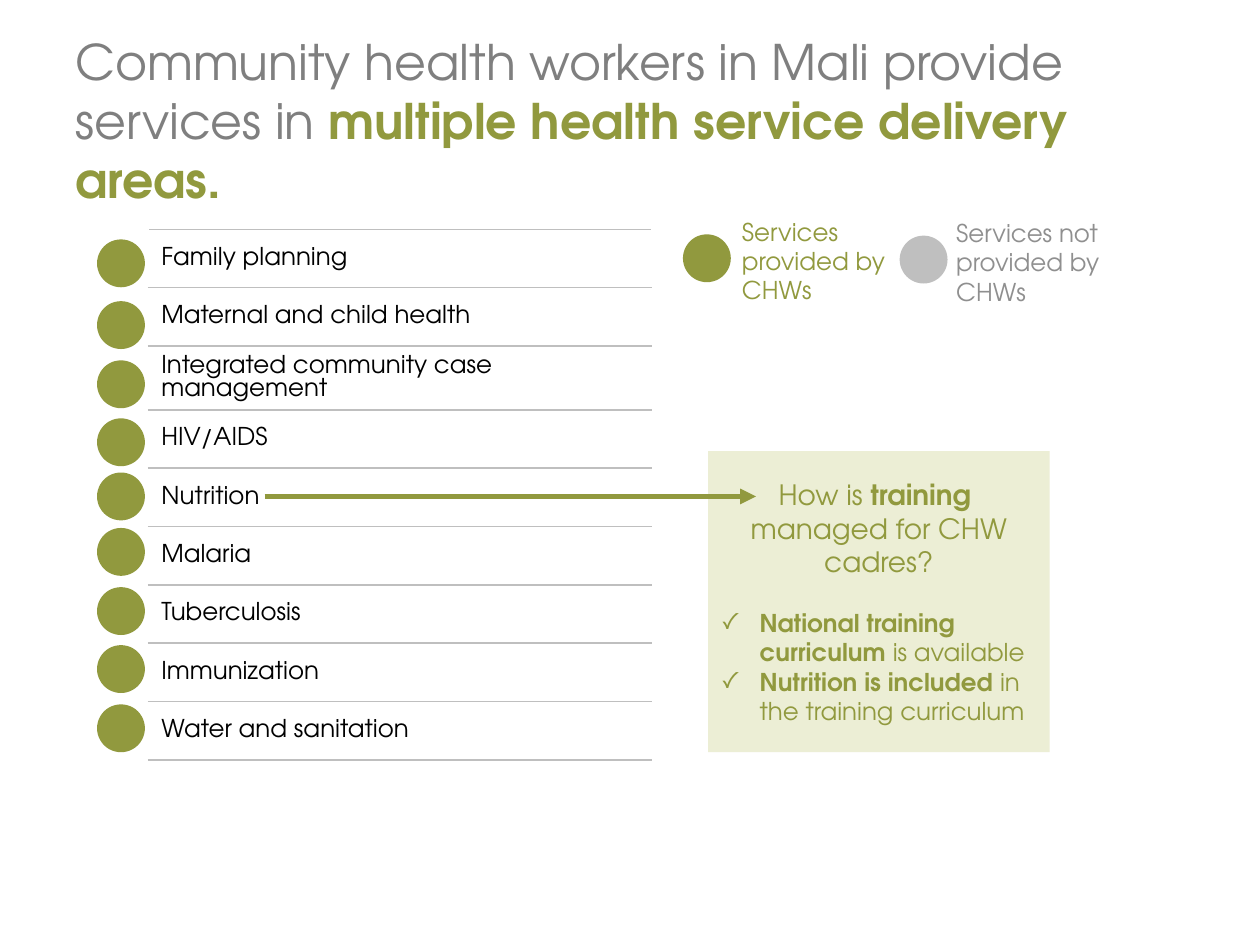
from lxml import etree
from pptx import Presentation
from pptx import util as u
from pptx.dml.color import RGBColor
from pptx.enum import shapes, text
from pptx.oxml.ns import qn

HUES = {"green": "91993E", "pale": "ECEED5", "title": "7F7F7F",
        "rule": "BFBFBF", "note": "8F8F8F", "black": "000000"}
FONT = "TeX Gyre Adventor"
MID = text.MSO_ANCHOR.MIDDLE
DOT = 0.38
ROWS = [("Family planning", 1.9), ("Maternal and child health", 2.39),
        ("Integrated community case management", 2.86), ("HIV/AIDS", 3.32),
        ("Nutrition", 3.75), ("Malaria", 4.19), ("Tuberculosis", 4.66),
        ("Immunization", 5.12), ("Water and sanitation", 5.59)]
KEYS = [("Services provided by CHWs", 5.42, 5.79, 1.86, "green", "green"),
        ("Services not provided by CHWs", 7.14, 7.49, 1.87, "rule", "note")]


def rgb(name):
    return RGBColor.from_string(HUES[name])


def write(par, runs, size=14, hue="green", align=None, gap=0, mark=None):
    """Fill a paragraph with (words, bold[, hue]) runs."""
    par.alignment = align
    par.space_before = u.Pt(gap)
    if mark:
        props = par._p.get_or_add_pPr()
        props.set("marL", str(u.Inches(0.31)))
        props.set("indent", str(-u.Inches(0.31)))
        etree.SubElement(props, qn("a:buFont"), typeface=FONT)
        etree.SubElement(props, qn("a:buChar"), char=mark)
    for words, bold, *tint in runs:
        run = par.add_run()
        run.text = words
        font = run.font
        font.name, font.size, font.bold = FONT, u.Pt(size), bold
        font.color.rgb = rgb(tint[0] if tint else hue)


class Deck:
    """Hold the house style and the current slide."""

    def __init__(self):
        self.prs = Presentation()
        self.prs.slide_width, self.prs.slide_height = u.Inches(10), u.Inches(7.5)
        self.items = self.prs.slides.add_slide(self.prs.slide_layouts[6]).shapes

    def label(self, box, runs, anchor=text.MSO_ANCHOR.TOP, **fmt):
        frame = self.items.add_textbox(*map(u.Inches, box)).text_frame
        frame.word_wrap = True
        frame.vertical_anchor = anchor
        write(frame.paragraphs[0], runs, **fmt)

    def shape(self, kind, box, hue):
        item = self.items.add_shape(kind, *map(u.Inches, box))
        item.shadow.inherit = False
        item.fill.solid()
        item.fill.fore_color.rgb = rgb(hue)
        item.line.fill.background()
        return item

    def dot(self, left, top, hue="green"):
        self.shape(shapes.MSO_SHAPE.OVAL, (left, top, DOT, DOT), hue)

    def panel(self, box, pars):
        frame = self.shape(shapes.MSO_SHAPE.RECTANGLE, box, "pale").text_frame
        frame.word_wrap = True
        frame.vertical_anchor = MID
        for num, (runs, fmt) in enumerate(pars):
            par = frame.add_paragraph() if num else frame.paragraphs[0]
            write(par, runs, **fmt)

    def table(self, box, cols, names):
        grid = self.items.add_table(len(names), len(cols), *map(u.Inches, box)).table
        grid.first_row = grid.horz_banding = False
        for col, width in zip(grid.columns, cols):
            col.width = u.Inches(width)
        for row, name in zip(grid.rows, names):
            for cell in row.cells:
                cell.fill.background()
                cell.margin_top = cell.margin_bottom = u.Inches(0.02)
            cell = row.cells[1]
            cell.vertical_anchor = MID
            write(cell.text_frame.paragraphs[0], [(name, False)], hue="black")
            self.edge(cell)

    def edge(self, cell):
        props = cell._tc.get_or_add_tcPr()
        for num, side in enumerate(("a:lnT", "a:lnB")):
            line = etree.Element(qn(side), w=str(u.Pt(1)))
            fill = etree.SubElement(line, qn("a:solidFill"))
            etree.SubElement(fill, qn("a:srgbClr"), val=HUES["rule"])
            props.insert(num, line)

    def arrow(self, start, end):
        item = self.items.add_connector(
            shapes.MSO_CONNECTOR.STRAIGHT, *map(u.Inches, start + end))
        item.line.color.rgb = rgb("green")
        item.line.width = u.Pt(3)
        etree.SubElement(item.line._get_or_add_ln(), qn("a:tailEnd"), type="triangle")
        etree.SubElement(item._element.spPr, qn("a:effectLst"))


def main():
    deck = Deck()
    deck.label((0.5, 0.33, 8.67, 1.24),
               [("Community health workers in Mali provide services in ", False, "title"),
                ("multiple health service delivery areas.", True)],
               anchor=MID, size=28)
    deck.table((0.67, 1.82, 4.5, 4.17), (0.51, 3.99), [name for name, _ in ROWS])
    for _, top in ROWS:
        deck.dot(0.77, top)
    for words, left, side, top, fill, hue in KEYS:
        deck.dot(left, top, fill)
        deck.label((side, top - 0.19, 1.35, 0.81), [(words, False)], hue=hue)
    head = {"size": 16, "align": text.PP_ALIGN.CENTER}
    deck.panel((5.62, 3.58, 2.71, 2.39), [
        ([("How is ", False), ("training ", True)], head),
        ([("managed for CHW cadres?", False)], head),
        ([("National training curriculum ", True), ("is available", False)],
         {"mark": "✓", "gap": 17}),
        ([("Nutrition is included", True), (" in the training curriculum", False)],
         {"mark": "✓"})])
    deck.arrow((2.1, 3.94), (6, 3.94))
    deck.prs.save("out.pptx")


if __name__ == "__main__":
    main()
